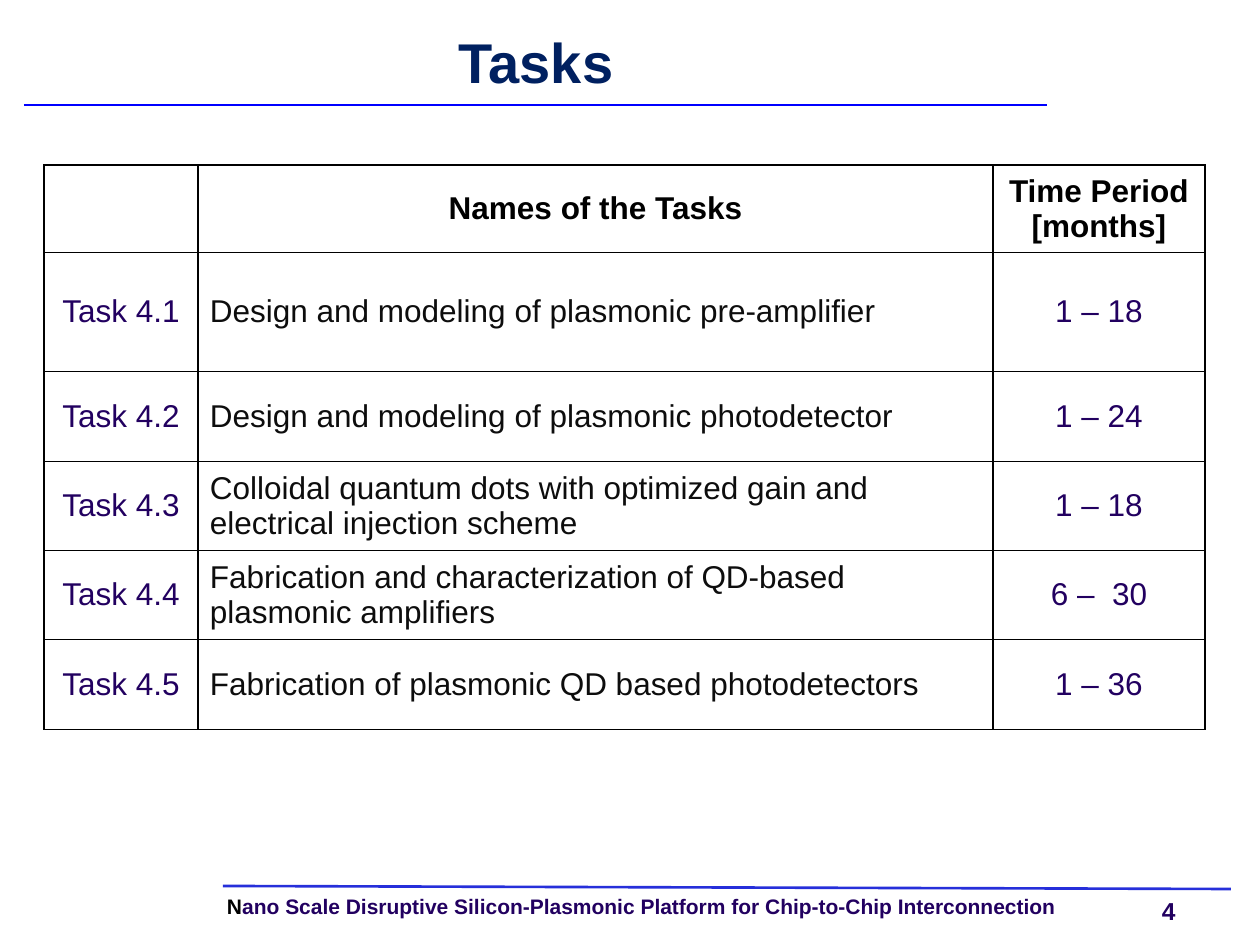
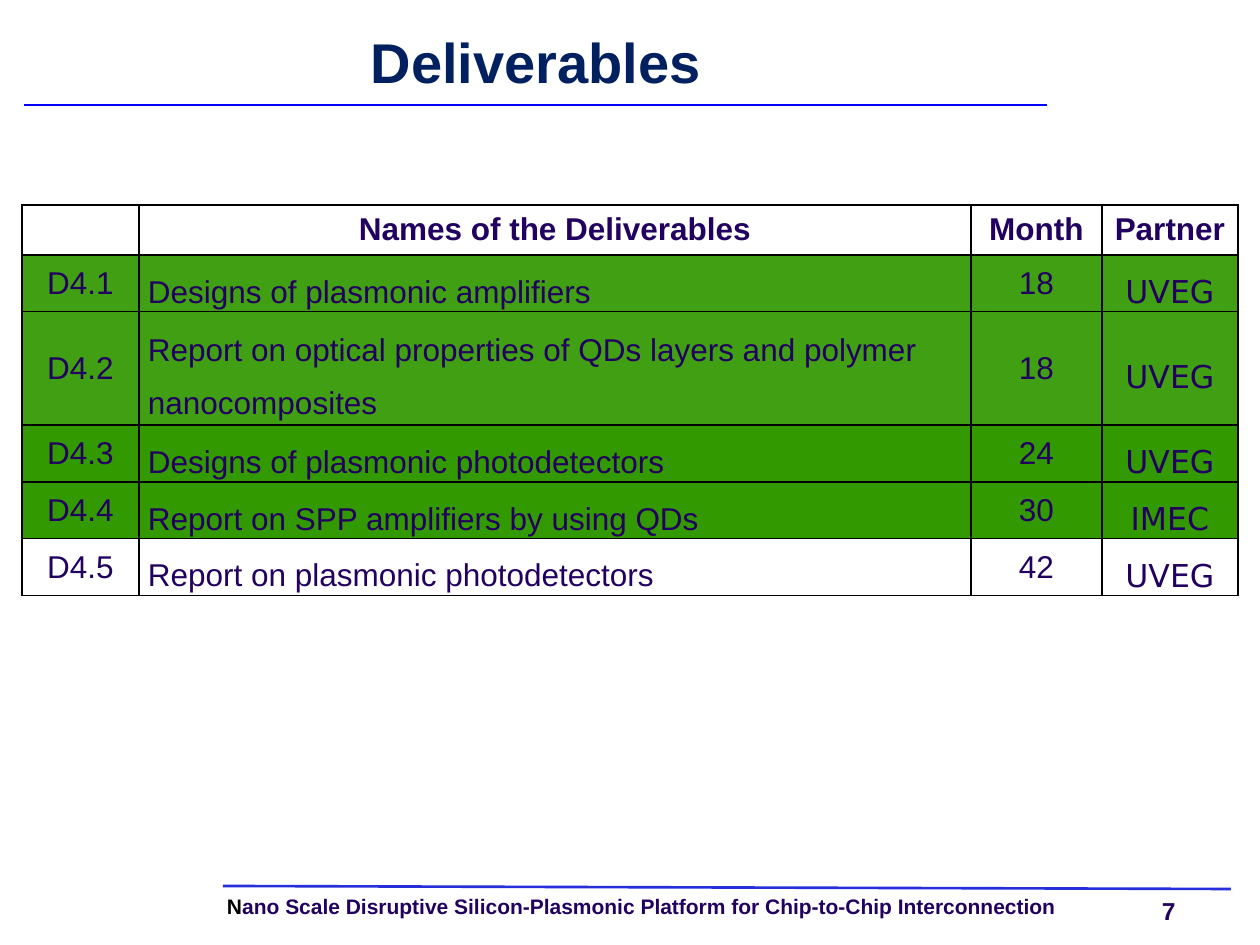
from lxml import etree
from pptx import Presentation
from pptx import util as u
from pptx.dml.color import RGBColor
from pptx.enum import shapes, text
from pptx.oxml import ns

SCALE = 914400 / 126
FONT, PARTNER_FONT = "Arial", "DejaVu Sans"
BLACK = RGBColor(0x00, 0x00, 0x00)
INK = RGBColor(0x0D, 0x0D, 0x0D)
PURPLE = RGBColor(0x22, 0x00, 0x60)
NAVY = RGBColor(0x00, 0x20, 0x60)
TITLE_BLUE = RGBColor(0x00, 0x00, 0xFF)
FOOTER_BLUE = RGBColor(0x26, 0x2F, 0xDA)
LIGHT_GREEN = RGBColor(0x40, 0x9F, 0x12)
GREEN = RGBColor(0x33, 0x99, 0x00)

PROJECT = "Nano Scale Disruptive Silicon-Plasmonic Platform for Chip-to-Chip Interconnection"
CENTER, LEFT = text.PP_ALIGN.CENTER, text.PP_ALIGN.LEFT

TASKS = {
    "title": "Tasks", "number": "4", "at": (44, 165),
    "cols": [154, 795, 212], "rows": [83, 119, 90, 89, 89, 90],
    "cells": [
        ["", "Names of the Tasks", "Time Period [months]"],
        ["Task 4.1", "Design and modeling of plasmonic pre-amplifier", "1 – 18"],
        ["Task 4.2", "Design and modeling of plasmonic photodetector", "1 – 24"],
        ["Task 4.3", "Colloidal quantum dots with optimized gain and electrical injection scheme", "1 – 18"],
        ["Task 4.4", "Fabrication and characterization of QD-based plasmonic amplifiers", "6 –  30"],
        ["Task 4.5", "Fabrication of plasmonic QD based photodetectors", "1 – 36"],
    ],
    "fills": [None] * 6, "header": BLACK, "names": INK,
    "margin": 12, "loose": (), "fonts": {},
}
DELIVERABLES = {
    "title": "Deliverables", "number": "7", "at": (22, 205),
    "cols": [117, 832, 131, 136], "rows": [50, 55, 106, 55, 55, 55],
    "cells": [
        ["", "Names of the Deliverables", "Month", "Partner"],
        ["D4.1", "Designs of plasmonic amplifiers", "18", "UVEG"],
        ["D4.2", "Report on optical properties of QDs layers and polymer nanocomposites", "18", "UVEG"],
        ["D4.3", "Designs of plasmonic photodetectors", "24", "UVEG"],
        ["D4.4", "Report on SPP amplifiers by using QDs", "30", "IMEC"],
        ["D4.5", "Report on plasmonic photodetectors", "42", "UVEG"],
    ],
    "fills": [None, LIGHT_GREEN, LIGHT_GREEN, GREEN, GREEN, None],
    "header": PURPLE, "names": PURPLE,
    "margin": 9, "loose": (1, 3), "fonts": {3: PARTNER_FONT},
}


def px(n):
    return u.Emu(round(n * SCALE))


def write(tf, *runs, size=18, bold=False, font=FONT, align=LEFT, spacing=None):
    tf.word_wrap = True
    p = tf.paragraphs[0]
    p.alignment = align
    p.line_spacing = spacing
    for words, color in runs:
        r = p.add_run()
        r.text = words
        r.font.name, r.font.size, r.font.bold = font, u.Pt(size), bold
        r.font.color.rgb = color


def add_text(s, box, *runs, anchor=text.MSO_ANCHOR.TOP, **fmt):
    tf = s.shapes.add_textbox(*map(px, box)).text_frame
    tf.margin_left = tf.margin_top = tf.margin_right = tf.margin_bottom = 0
    tf.vertical_anchor = anchor
    write(tf, *runs, **fmt)


def add_line(s, ends, color):
    line = s.shapes.add_connector(shapes.MSO_CONNECTOR.STRAIGHT, *map(px, ends))
    line.line.color.rgb = color
    line.line.width = u.Pt(1.5)
    etree.SubElement(line._element.spPr, ns.qn("a:effectLst"))


def add_borders(cell):
    tcPr = cell._tc.get_or_add_tcPr()
    for i, side in enumerate(("lnL", "lnR", "lnT", "lnB")):
        ln = etree.Element(ns.qn(f"a:{side}"), w=str(u.Pt(1)))
        fill = etree.SubElement(ln, ns.qn("a:solidFill"))
        etree.SubElement(fill, ns.qn("a:srgbClr"), val=str(BLACK))
        tcPr.insert(i, ln)


def add_table(s, d):
    cols, rows = d["cols"], d["rows"]
    box = (*d["at"], sum(cols), sum(rows))
    table = s.shapes.add_table(len(rows), len(cols), *map(px, box)).table
    table.first_row = table.horz_banding = False
    for col, width in zip(table.columns, cols):
        col.width = px(width)
    for i, (row, height, fill) in enumerate(zip(table.rows, rows, d["fills"])):
        row.height = px(height)
        for j, cell in enumerate(row.cells):
            header = i == 0
            loose = j in d["loose"] and not header
            cell.vertical_anchor = text.MSO_ANCHOR.MIDDLE
            cell.margin_left = cell.margin_right = px(d["margin"])
            cell.margin_top = cell.margin_bottom = px(0 if loose else 6)
            if fill:
                cell.fill.solid()
                cell.fill.fore_color.rgb = fill
            else:
                cell.fill.background()
            add_borders(cell)
            words = d["cells"][i][j]
            if words:
                color = d["header"] if header else d["names"] if j == 1 else PURPLE
                write(cell.text_frame, (words, color), bold=header,
                      font=FONT if header else d["fonts"].get(j, FONT),
                      align=LEFT if j == 1 and not header else CENTER,
                      spacing=1.5 if loose else None)


def add_frame(s, title, number):
    add_text(s, (227, 896, 900, 23), (PROJECT[0], BLACK), (PROJECT[1:], PURPLE),
             size=12, bold=True, spacing=0.9)
    add_text(s, (1162, 896, 50, 29), (number, PURPLE), size=14, bold=True)
    add_line(s, (223, 886, 1231, 889), FOOTER_BLUE)
    add_line(s, (24, 105, 1047, 105), TITLE_BLUE)
    add_text(s, (25, 25, 1022, 84), (title, NAVY), size=32, bold=True, align=CENTER,
             spacing=u.Pt(32), anchor=text.MSO_ANCHOR.MIDDLE)


def main():
    prs = Presentation()
    prs.slide_width, prs.slide_height = px(1260), px(945)
    for d in (TASKS, DELIVERABLES):
        s = prs.slides.add_slide(prs.slide_layouts[6])
        add_frame(s, d["title"], d["number"])
        add_table(s, d)
    prs.save("out.pptx")


if __name__ == "__main__":
    main()
